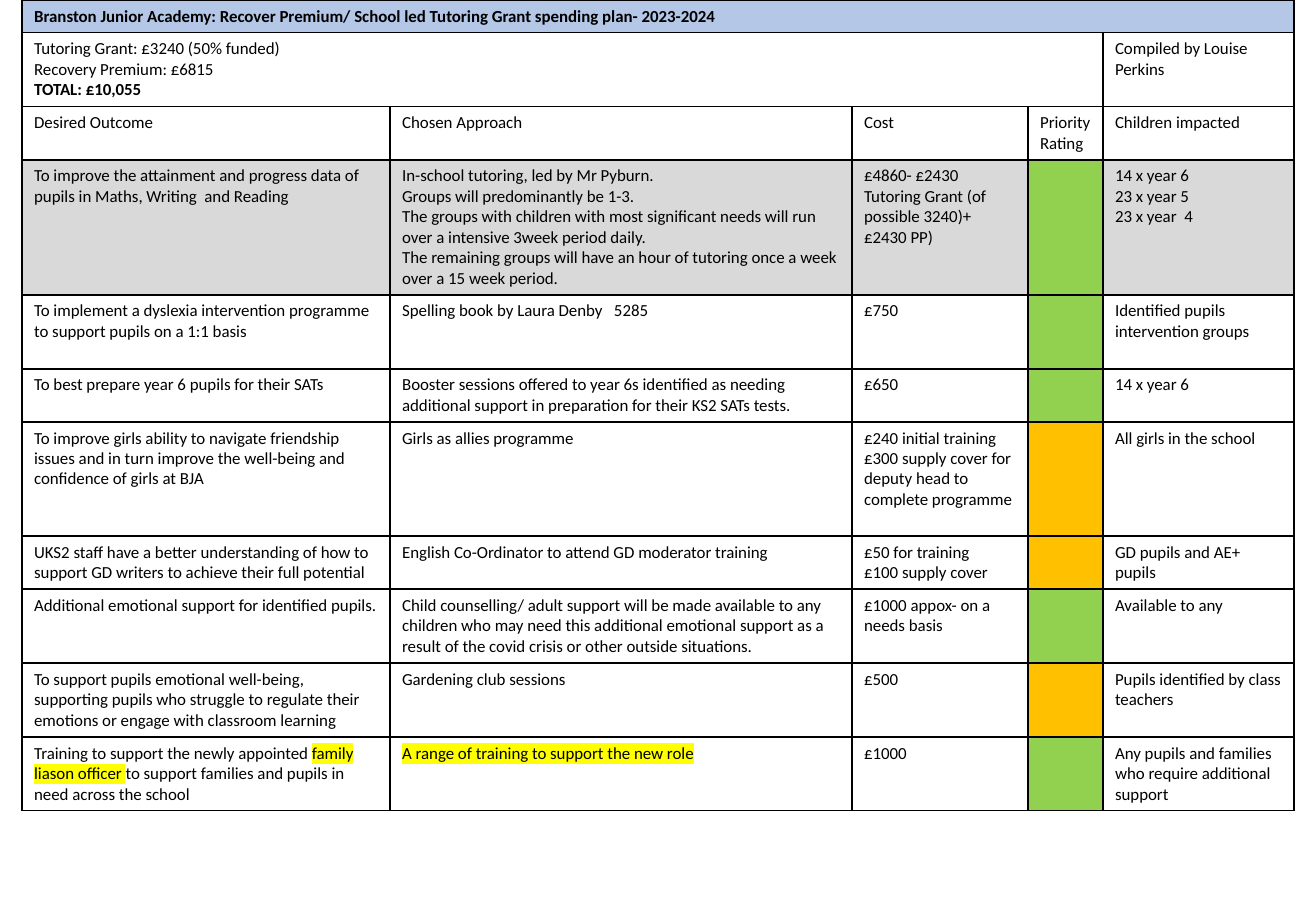
from dataclasses import dataclass

from lxml.etree import SubElement
from pptx import Presentation
from pptx.dml.color import RGBColor
from pptx.oxml import parse_xml
from pptx.oxml.ns import nsdecls, qn
from pptx.util import Emu, Pt


@dataclass(frozen=True)
class Theme:
    font: str = "Calibri"
    size: int = 10
    border: int = 1
    ink: str = "000000"
    paper: str = "FFFFFF"
    title: str = "B4C7E7"
    shaded: str = "D9D9D9"
    green: str = "92D050"
    amber: str = "FFC000"
    marker: str = "FFFF00"


THEME = Theme()
EMU_PER_PX = 7526
SLIDE = (1316, 911)
TABLE_LEFT, TABLE_TOP = 22, 0
COLUMNS = [368, 462, 176, 75, 191]
ROWS = [32, 74, 53, 135, 74, 53, 114, 53, 74, 74, 73]
PRIORITY_COLUMN = 3

TITLE = "Branston Junior Academy: Recover Premium/ School led Tutoring Grant spending plan- 2023-2024"
FUNDING = "Tutoring Grant: £3240 (50% funded)\nRecovery Premium: £6815\nTOTAL: £10,055"
AUTHOR = "Compiled by Louise Perkins"
HEADINGS = ["Desired Outcome", "Chosen Approach", "Cost", "Priority Rating", "Children impacted"]

# Outcome, approach, cost, rating colour, children; text between bars is highlighted.
PLAN = [
    ("To improve the attainment and progress data of pupils in Maths, Writing  and Reading",
     "In-school tutoring, led by Mr Pyburn.\n"
     "Groups will predominantly be 1-3.\n"
     "The groups with children with most significant needs will run over a intensive 3week period daily.\n"
     "The remaining groups will have an hour of tutoring once a week over a 15 week period.",
     "£4860- £2430 Tutoring Grant (of possible 3240)+ £2430 PP)",
     THEME.green, "14 x year 6\n23 x year 5\n23 x year  4"),
    ("To implement a dyslexia intervention programme to support pupils on a 1:1 basis",
     "Spelling book by Laura Denby   5285", "£750",
     THEME.green, "Identified pupils intervention groups"),
    ("To best prepare year 6 pupils for their SATs",
     "Booster sessions offered to year 6s identified as needing additional support "
     "in preparation for their KS2 SATs tests.",
     "£650", THEME.green, "14 x year 6"),
    ("To improve girls ability to navigate friendship issues and in turn improve "
     "the well-being and confidence of girls at BJA",
     "Girls as allies programme",
     "£240 initial training\n£300 supply cover for deputy head to complete programme",
     THEME.amber, "All girls in the school"),
    ("UKS2 staff have a better understanding of how to support GD writers to achieve their full potential",
     "English Co-Ordinator to attend GD moderator training",
     "£50 for training\n£100 supply cover", THEME.amber, "GD pupils and AE+ pupils"),
    ("Additional emotional support for identified pupils.",
     "Child counselling/ adult support will be made available to any children who may need "
     "this additional emotional support as a result of the covid crisis or other outside situations.",
     "£1000 appox- on a needs basis", THEME.green, "Available to any"),
    ("To support pupils emotional well-being, supporting pupils who struggle to regulate "
     "their emotions or engage with classroom learning",
     "Gardening club sessions", "£500", THEME.amber, "Pupils identified by class teachers"),
    ("Training to support the newly appointed |family liason officer |"
     "to support families and pupils in need across the school",
     "|A range of training to support the new role|", "£1000",
     THEME.green, "Any pupils and families who require additional support"),
]


def px(n):
    return Emu(n * EMU_PER_PX)


def add_run(p, text, bold, marked):
    r = p.add_run()
    r.text = text
    r.font.size = Pt(THEME.size)
    r.font.bold = bold
    r.font.name = THEME.font
    r.font.color.rgb = RGBColor.from_string(THEME.ink)
    if marked:
        highlight = parse_xml(f'<a:highlight {nsdecls("a")}><a:srgbClr val="{THEME.marker}"/></a:highlight>')
        r.font._element.find(qn("a:solidFill")).addnext(highlight)


def set_borders(cell):
    tc_pr = cell._tc.get_or_add_tcPr()
    for i, side in enumerate(("lnL", "lnR", "lnT", "lnB")):
        ln = parse_xml(f'<a:{side} {nsdecls("a")} w="{Pt(THEME.border)}"/>')
        fill = SubElement(ln, qn("a:solidFill"))
        SubElement(fill, qn("a:srgbClr"), val=THEME.ink)
        tc_pr.insert(i, ln)


def set_fill(cell, color):
    cell.fill.solid()
    cell.fill.fore_color.rgb = RGBColor.from_string(color)


def write_cell(cell, text, bold_line=None):
    """Write one paragraph per line, with the line numbered bold_line in bold."""
    tf = cell.text_frame
    for n, line in enumerate(text.split("\n")):
        p = tf.add_paragraph() if n else tf.paragraphs[0]
        for i, part in enumerate(line.split("|")):
            if part:
                add_run(p, part, n == bold_line, i % 2 == 1)


def add_plan_table(s):
    shape = s.shapes.add_table(len(ROWS), len(COLUMNS), px(TABLE_LEFT), px(TABLE_TOP),
                               px(sum(COLUMNS)), px(sum(ROWS)))
    table = shape.table
    table.first_row = table.horz_banding = False
    for column, width in zip(table.columns, COLUMNS):
        column.width = px(width)
    for row, height in zip(table.rows, ROWS):
        row.height = px(height)
    for cell in table.iter_cells():
        set_fill(cell, THEME.paper)
        set_borders(cell)
    return table


def write_header(table):
    last = len(COLUMNS) - 1
    title, funding = table.cell(0, 0), table.cell(1, 0)
    title.merge(table.cell(0, last))
    funding.merge(table.cell(1, last - 1))
    set_fill(title, THEME.title)
    write_cell(title, TITLE, bold_line=0)
    write_cell(funding, FUNDING, bold_line=2)
    write_cell(table.cell(1, last), AUTHOR)
    for c, heading in enumerate(HEADINGS):
        write_cell(table.cell(2, c), heading)


def write_plan(table):
    for r, entry in enumerate(PLAN, start=3):
        for c, value in enumerate(entry):
            cell = table.cell(r, c)
            if c == PRIORITY_COLUMN:
                set_fill(cell, value)
                continue
            write_cell(cell, value)
            if r == 3:
                set_fill(cell, THEME.shaded)


def main():
    prs = Presentation()
    prs.slide_width, prs.slide_height = map(px, SLIDE)
    s = prs.slides.add_slide(prs.slide_layouts[6])
    table = add_plan_table(s)
    write_header(table)
    write_plan(table)
    prs.save("out.pptx")


if __name__ == "__main__":
    main()
